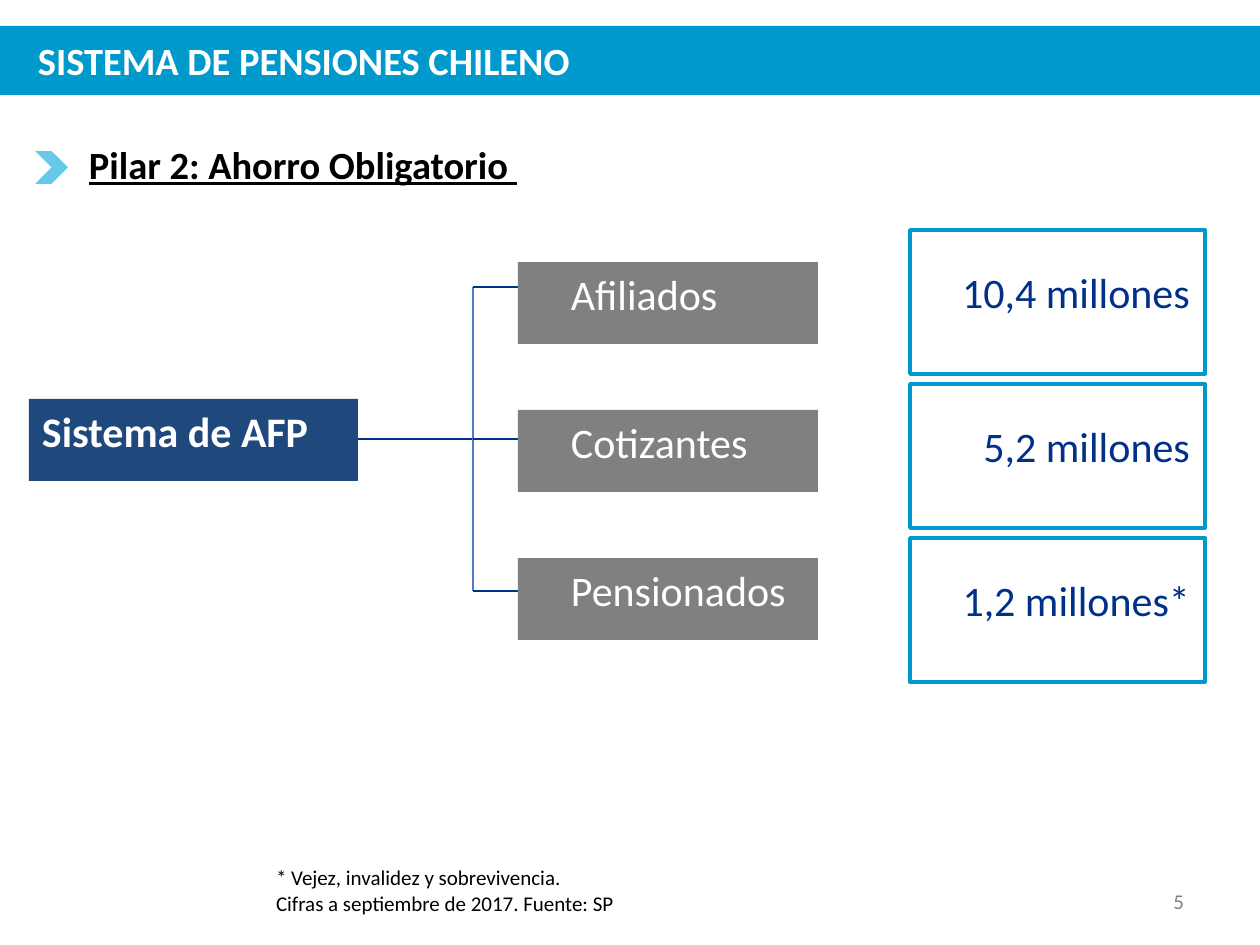
from pptx import Presentation
from pptx.dml.color import RGBColor
from pptx.enum.shapes import MSO_CONNECTOR, MSO_SHAPE
from pptx.enum.text import MSO_ANCHOR, PP_ALIGN
from pptx.oxml.ns import qn
from pptx.util import Emu, Pt
from lxml.etree import SubElement

PX_PER_INCH = 126
CYAN, NAVY, GREY, WHITE, BLACK = "0099CC", "003087", "808080", "FFFFFF", "000000"
INSET_X, INSET_Y = 13, 6


def px(length):
    return Emu(round(length * 914400 / PX_PER_INCH))


def color(hex_text):
    return RGBColor.from_string(hex_text)


def write(shape, text, size, hex_text, bold=False, underline=False, align=PP_ALIGN.LEFT,
          anchor=MSO_ANCHOR.TOP, left=INSET_X, top=INSET_Y, right=INSET_X):
    frame = shape.text_frame
    frame.word_wrap = True
    frame.vertical_anchor = anchor
    frame.margin_left, frame.margin_right = px(left), px(right)
    frame.margin_top, frame.margin_bottom = px(top), px(INSET_Y)
    frame.text = text
    for para in frame.paragraphs:
        para.alignment = align
        for span in para.runs:
            font = span.font
            font.name, font.size, font.color.rgb = "Calibri", Pt(size), color(hex_text)
            font.bold, font.underline = bold, underline


def add_text(page, box, text, size, hex_text, **options):
    shape = page.shapes.add_textbox(*map(px, box))
    write(shape, text, size, hex_text, **options)


def add_box(page, box, fill=None, outline=None, kind=MSO_SHAPE.RECTANGLE):
    shape = page.shapes.add_shape(kind, *map(px, box))
    shape.shadow.inherit = False
    if fill:
        shape.fill.solid()
        shape.fill.fore_color.rgb = color(fill)
    else:
        shape.fill.background()
    if outline:
        shape.line.color.rgb = color(outline)
        shape.line.width = Pt(2)
    else:
        shape.line.fill.background()
    return shape


def add_line(page, x1, y1, x2, y2, hex_text=NAVY):
    line = page.shapes.add_connector(MSO_CONNECTOR.STRAIGHT, *map(px, (x1, y1, x2, y2)))
    line.line.color.rgb = color(hex_text)
    line.line.width = Pt(0.75)
    SubElement(line.element.spPr, qn("a:effectLst"))


def add_title(page, box, text):
    left, top, width, height = box
    title = page.shapes.title
    title.left, title.top, title.width, title.height = map(
        px, (left + 25, top, width - 126, height))
    write(title, text, 22, WHITE, bold=True, anchor=MSO_ANCHOR.MIDDLE)
    band = add_box(page, box, fill=CYAN)
    title.element.addprevious(band.element)


def add_heading(page, box, text):
    left, top, width, height = box
    chevron = add_box(page, (left, top + 16, 33, 33), "00A6D6", kind=MSO_SHAPE.CHEVRON)
    fill_color = chevron.element.spPr.find(qn("a:solidFill"))[0]
    SubElement(fill_color, qn("a:alpha"), val="60000")
    add_text(page, (left + 41, top, width - 41, height), text, 22, BLACK,
             bold=True, underline=True)


def add_tree(page, box, root, branches):
    left, top, width, height = box
    block_height, root_width, branch_width = 82, 329, 300
    branch_left = left + width - branch_width
    step = (height - block_height) / (len(branches) - 1)
    root_block = add_box(page, (left, top + 137, root_width, block_height), fill="1F497D")
    write(root_block, root, 24, WHITE, bold=True)

    trunk, first, spacing = left + 444, top + 25, 152
    levels = [first + spacing * index for index in range(len(branches))]
    add_line(page, left + root_width, levels[1], trunk, levels[1])
    add_line(page, trunk, levels[0], trunk, levels[-1], "4B7EBC")
    for index, (name, level) in enumerate(zip(branches, levels)):
        add_line(page, trunk, level, branch_left, level)
        block = add_box(page, (branch_left, top + step * index, branch_width, block_height),
                        fill=GREY)
        write(block, name, 24, WHITE, left=53, right=0)


def add_values(page, box, values):
    left, top, width, height = box
    gap = 10
    card_height = (height - gap * (len(values) - 1)) / len(values)
    for index, value in enumerate(values):
        card_top = top + (card_height + gap) * index
        card = add_box(page, (left, card_top, width, card_height), outline=CYAN)
        write(card, value, 24, NAVY, align=PP_ALIGN.RIGHT, top=36, right=15)


def add_footer(page, box, note, number):
    left, top, width, height = box
    add_text(page, (left, top, 851, height), note, 12, BLACK)
    number_width = 294
    add_text(page, (left + width - number_width, top + 17, number_width, 50), number, 12, GREY,
             align=PP_ALIGN.RIGHT, anchor=MSO_ANCHOR.MIDDLE)


def main():
    deck = Presentation()
    deck.slide_width, deck.slide_height = px(1260), px(945)
    page = deck.slides.add_slide(deck.slide_layouts[5])
    add_title(page, (0, 26, 1260, 69), "SISTEMA DE PENSIONES CHILENO")
    add_tree(page, (29, 262, 789, 378), "Sistema de AFP",
             ["Afiliados", "Cotizantes", "Pensionados"])
    add_values(page, (910, 230, 295, 452), ["10,4 millones", "5,2 millones", "1,2 millones*"])
    add_footer(page, (263, 859, 934, 63),
               "* Vejez, invalidez y sobrevivencia. \vCifras a septiembre de 2017. Fuente: SP", "5")
    add_heading(page, (35, 135, 1141, 59), "Pilar 2: Ahorro Obligatorio ")
    deck.save("out.pptx")


if __name__ == "__main__":
    main()
